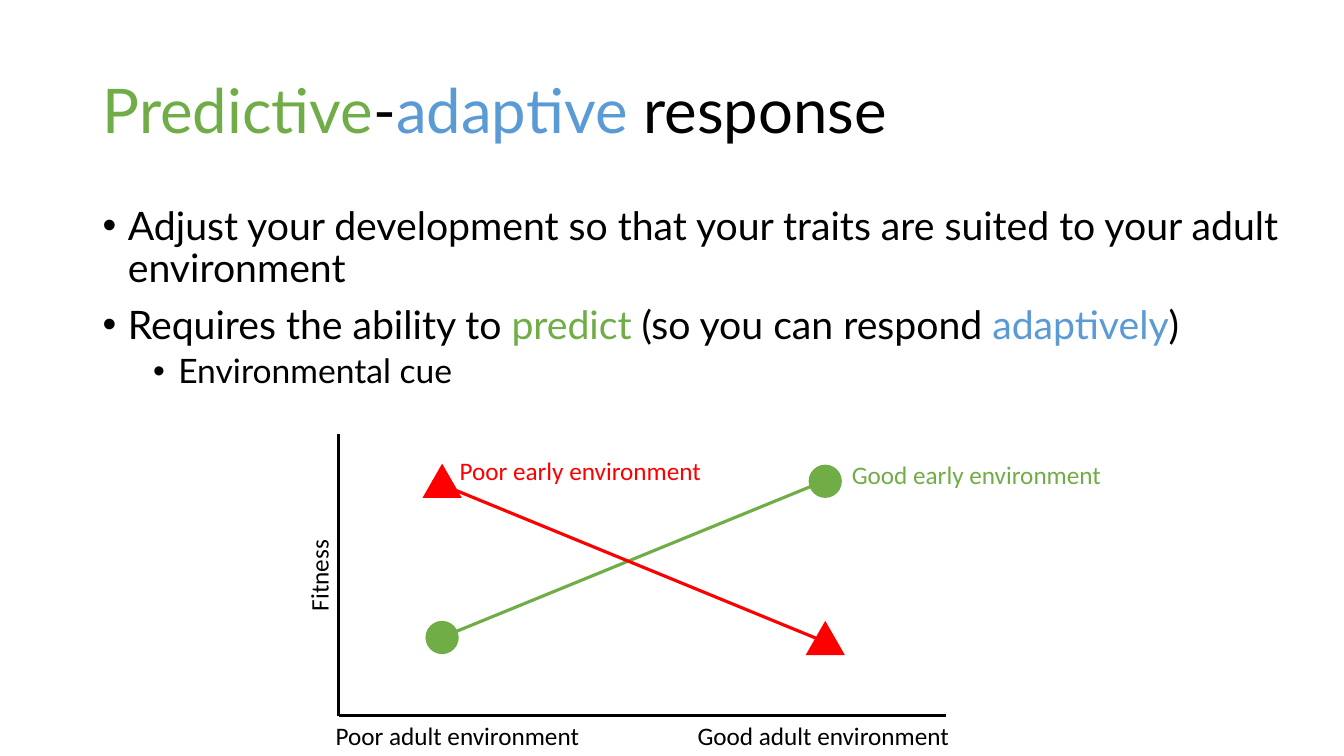
import pptx
import pptx.util
import pptx.dml.color
import pptx.enum.shapes
import pptx.enum.text
import pptx.oxml
import pptx.oxml.ns
from dataclasses import dataclass

Inches = pptx.util.Inches
Pt = pptx.util.Pt
SHAPE = pptx.enum.shapes.MSO_SHAPE
ANCHOR = pptx.enum.text.MSO_ANCHOR
AUTO_SIZE = pptx.enum.text.MSO_AUTO_SIZE
ALIGN = pptx.enum.text.PP_ALIGN


@dataclass(frozen=True)
class Theme:
    black: str = "000000"
    green: str = "70AD47"
    blue: str = "5B9BD5"
    red: str = "FF0000"
    text_font: str = "Lato"
    label_font: str = "Calibri"
    title_size: int = 44
    body_sizes: tuple = (28, 24)
    label_size: int = 18
    line_width: float = 2.25


THEME = Theme()


def rgb(color):
    return pptx.dml.color.RGBColor.from_string(color)


def place(sp, left, top, width, height):
    sp.left, sp.top = Inches(left), Inches(top)
    sp.width, sp.height = Inches(width), Inches(height)


def add_runs(p, parts, font, size):
    """Fill a paragraph from (text, colour) pairs."""
    for text, color in parts:
        r = p.add_run()
        r.text = text
        r.font.name = font
        r.font.size = Pt(size)
        r.font.color.rgb = rgb(color)


def set_title(s, parts):
    sp = s.shapes.title
    place(sp, 0.92, 0.4, 11.5, 1.45)
    tf = sp.text_frame
    tf.word_wrap = True
    tf.auto_size = AUTO_SIZE.NONE
    tf.vertical_anchor = ANCHOR.MIDDLE
    p = tf.paragraphs[0]
    p.alignment = ALIGN.LEFT
    p.line_spacing = 0.9
    add_runs(p, parts, THEME.text_font, THEME.title_size)


def set_bullet(p, level):
    p.level = level
    pPr = p._p.get_or_add_pPr()
    pPr.set("marL", str(Inches(0.25 + 0.5 * level)))
    pPr.set("indent", str(Inches(-0.25)))
    font = pptx.oxml.parse_xml(
        f'<a:buFont {pptx.oxml.ns.nsdecls("a")} typeface="Arial"/>')
    char = pptx.oxml.parse_xml(
        f'<a:buChar {pptx.oxml.ns.nsdecls("a")} char="•"/>')
    pPr.extend([font, char])


def add_bullets(s, items):
    """Add a bulleted list from (level, parts) pairs."""
    sp = s.shapes.add_textbox(Inches(0.92), Inches(2), Inches(12.42), Inches(2.08))
    tf = sp.text_frame
    tf.word_wrap = True
    for i, (level, parts) in enumerate(items):
        p = tf.add_paragraph() if i else tf.paragraphs[0]
        p.line_spacing = 0.9
        p.space_before = Pt(5 if level else 10)
        set_bullet(p, level)
        add_runs(p, parts, THEME.text_font, THEME.body_sizes[level])


def add_label(s, text, left, top, width, color=THEME.black, rotation=0):
    sp = s.shapes.add_textbox(Inches(left), Inches(top), Inches(width), Inches(0.4))
    sp.rotation = rotation
    tf = sp.text_frame
    tf.word_wrap = False
    tf.auto_size = AUTO_SIZE.SHAPE_TO_FIT_TEXT
    add_runs(tf.paragraphs[0], [(text, color)], THEME.label_font, THEME.label_size)


def add_line(s, start, end, color=THEME.black):
    cxn = s.shapes.add_connector(
        pptx.enum.shapes.MSO_CONNECTOR.STRAIGHT,
        Inches(start[0]), Inches(start[1]), Inches(end[0]), Inches(end[1]))
    cxn.line.color.rgb = rgb(color)
    cxn.line.width = Pt(THEME.line_width)
    cxn._element.spPr.append(
        pptx.oxml.parse_xml(f'<a:effectLst {pptx.oxml.ns.nsdecls("a")}/>'))


def add_marker(s, kind, left, top, width, height, color):
    sp = s.shapes.add_shape(
        kind, Inches(left), Inches(top), Inches(width), Inches(height))
    sp.shadow.inherit = False
    sp.fill.solid()
    sp.fill.fore_color.rgb = rgb(color)
    sp.line.fill.background()


def add_fitness_plot(s):
    origin = (3.36, 7.1)
    add_line(s, (3.36, 4.31), origin)
    add_line(s, (9.38, 7.1), origin)
    add_label(s, "Poor adult environment", 3.23, 7.1, 2.65)
    add_label(s, "Good adult environment", 6.82, 7.1, 2.73)
    add_label(s, "Fitness", 2.7, 5.5, 0.92, rotation=270)

    for left, top in ((4.22, 6.16), (8.02, 4.61)):
        add_marker(s, SHAPE.OVAL, left, top, 0.33, 0.33, THEME.green)
    for left, top in ((4.19, 4.6), (7.99, 6.16)):
        add_marker(s, SHAPE.ISOSCELES_TRIANGLE, left, top, 0.39, 0.34, THEME.red)

    add_label(s, "Good early environment", 8.35, 4.51, 2.7, THEME.green)
    add_label(s, "Poor early environment", 4.46, 4.47, 2.62, THEME.red)
    add_line(s, (4.39, 6.32), (8.18, 4.77), THEME.green)
    add_line(s, (4.29, 4.77), (8.09, 6.33), THEME.red)


def main():
    prs = pptx.Presentation()
    prs.slide_width, prs.slide_height = Inches(13.33), Inches(7.5)
    s = prs.slides.add_slide(prs.slide_layouts.get_by_name("Title Only"))
    set_title(s, [("Predictive", THEME.green), ("-", THEME.black),
                  ("adaptive", THEME.blue), (" response", THEME.black)])
    add_bullets(s, [
        (0, [("Adjust your development so that your traits are suited "
              "to your adult environment", THEME.black)]),
        (0, [("Requires the ability to ", THEME.black),
             ("predict", THEME.green),
             (" (so you can respond ", THEME.black),
             ("adaptively", THEME.blue),
             (")", THEME.black)]),
        (1, [("Environmental cue", THEME.black)]),
    ])
    add_fitness_plot(s)
    prs.save("out.pptx")


if __name__ == "__main__":
    main()
